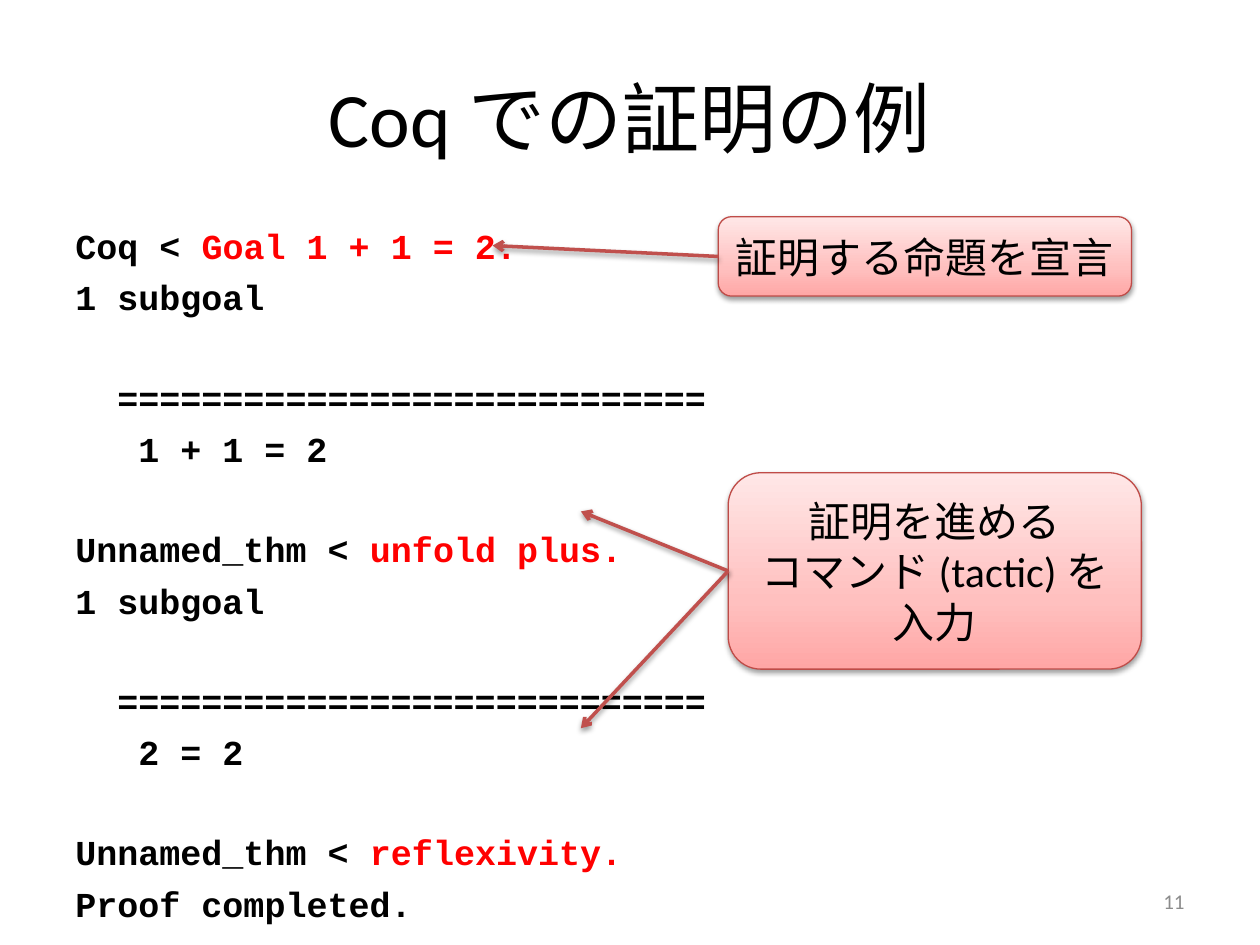
from copy import deepcopy
from dataclasses import dataclass

from lxml.etree import SubElement
from pptx import Presentation
from pptx.dml.color import RGBColor as Rgb
from pptx.enum.shapes import MSO_CONNECTOR as Connector, MSO_SHAPE as Shape
from pptx.enum.text import MSO_ANCHOR as Anchor, PP_ALIGN as Align
from pptx.oxml.ns import qn
from pptx.util import Cm, Pt


@dataclass(frozen=True)
class Theme:
    sans: str = "Calibri"
    mono: str = "Courier New"
    ink: str = "000000"
    command: str = "FF0000"
    muted: str = "8C8C8C"
    arrow: str = "C0504D"
    outline: str = "BF4C48"
    gradient: tuple = ((0, "FFA6A5"), (35, "FFC0BF"), (100, "FFE7E7"))
    title_size: float = 44
    callout_size: float = 24
    code_size: float = 20
    number_size: float = 12
    code_char: float = 12
    code_gap: float = 5.3
    code_line: float = 28


THEME = Theme()

RULE = "=" * 28
SESSION = [
    (0, 0, "Coq < ", "Goal 1 + 1 = 2."),
    (0, 0, "1 subgoal", ""),
    (1, 2, RULE, ""),
    (0, 3, "1 + 1 = 2", ""),
    (1, 0, "Unnamed_thm < ", "unfold plus."),
    (0, 0, "1 subgoal", ""),
    (1, 2, RULE, ""),
    (0, 3, "2 = 2", ""),
    (1, 0, "Unnamed_thm < ", "reflexivity."),
    (0, 0, "Proof completed.", ""),
]
CALLOUTS = [
    ((14.48, 4.37, 8.33, 1.6), ["証明する命題を宣言"], [(9.93, 4.95)]),
    ((14.68, 9.53, 8.33, 3.96),
     ["証明を進める", "コマンド (tactic) を", "入力"],
     [(11.71, 10.31), (11.71, 14.68)]),
]


def lengths(box):
    return [Cm(value) for value in box]


def add_span(para, text, size, color=THEME.ink, font=THEME.sans, bold=False):
    span = para.add_run()
    span.text = text
    span.font.size = Pt(size)
    span.font.name = font
    span.font.bold = bold
    span.font.color.rgb = Rgb.from_string(color)


def add_shadow(shape):
    effects = SubElement(shape.element.spPr, qn("a:effectLst"))
    shadow = SubElement(effects, qn("a:outerShdw"), blurRad=str(Pt(3.1)),
                        dist=str(Pt(1.6)), dir="5400000", rotWithShape="0")
    color = SubElement(shadow, qn("a:srgbClr"), val="000000")
    SubElement(color, qn("a:alpha"), val="38000")


def fill_gradient(fill):
    fill.gradient()
    fill.gradient_angle = 90
    first = fill.gradient_stops[0]
    first.color.rgb = Rgb.from_string(THEME.ink)
    stop_list = fill._xPr.find(qn("a:gradFill")).find(qn("a:gsLst"))
    pattern = deepcopy(stop_list[0])
    for stop in list(stop_list):
        stop_list.remove(stop)
    for _ in THEME.gradient:
        stop_list.append(deepcopy(pattern))
    for stop, (position, color) in zip(fill.gradient_stops, THEME.gradient):
        stop.position = position / 100
        stop.color.rgb = Rgb.from_string(color)


def place_title(page, box):
    title = page.shapes.title
    title.left, title.top, title.width, title.height = lengths(box)
    title.text_frame.vertical_anchor = Anchor.MIDDLE
    para = title.text_frame.paragraphs[0]
    para.alignment = Align.CENTER
    add_span(para, "Coq での証明の例", THEME.title_size)


def place_session(page, box):
    frame = page.shapes.add_textbox(*lengths(box)).text_frame
    frame.word_wrap = True
    frame.margin_top = Cm(0.08)
    for index, (blank_lines, indent, output, command) in enumerate(SESSION):
        para = frame.add_paragraph() if index else frame.paragraphs[0]
        para.space_before = Pt(THEME.code_gap + blank_lines * THEME.code_line)
        para._p.get_or_add_pPr().set("marL", str(Pt(indent * THEME.code_char)))
        add_span(para, output, THEME.code_size, font=THEME.mono, bold=True)
        if command:
            add_span(para, command, THEME.code_size, THEME.command, THEME.mono, True)


def place_arrow(page, callout, target):
    end = lengths(target)
    arrow = page.shapes.add_connector(Connector.STRAIGHT, callout.left, callout.top, *end)
    arrow.begin_connect(callout, 1)
    arrow.line.width = Pt(2)
    arrow.line.color.rgb = Rgb.from_string(THEME.arrow)
    SubElement(arrow.line._get_or_add_ln(), qn("a:tailEnd"), type="arrow")
    add_shadow(arrow)


def place_callout(page, box, lines, targets):
    callout = page.shapes.add_shape(Shape.ROUNDED_RECTANGLE, *lengths(box))
    fill_gradient(callout.fill)
    callout.line.color.rgb = Rgb.from_string(THEME.outline)
    callout.line.width = Pt(0.75)
    add_shadow(callout)
    callout.text_frame.word_wrap = True
    callout.text_frame.vertical_anchor = Anchor.MIDDLE
    para = callout.text_frame.paragraphs[0]
    para.alignment = Align.CENTER
    for index, line in enumerate(lines):
        if index:
            para.add_line_break()
        add_span(para, line, THEME.callout_size)
    for target in targets:
        place_arrow(page, callout, target)


def place_number(page, box):
    frame = page.shapes.add_textbox(*lengths(box)).text_frame
    frame.word_wrap = True
    frame.vertical_anchor = Anchor.MIDDLE
    para = frame.paragraphs[0]
    para.alignment = Align.RIGHT
    add_span(para, "11", THEME.number_size, THEME.muted)


def main():
    deck = Presentation()
    deck.slide_width, deck.slide_height = Cm(25.4), Cm(19.05)
    page = deck.slides.add_slide(deck.slide_layouts[5])
    place_title(page, (1.27, 0.76, 22.86, 3.18))
    place_session(page, (1.27, 4.45, 22.86, 12.57))
    for callout in CALLOUTS:
        place_callout(page, *callout)
    place_number(page, (18.21, 17.65, 5.92, 1.02))
    deck.save("out.pptx")


if __name__ == "__main__":
    main()
